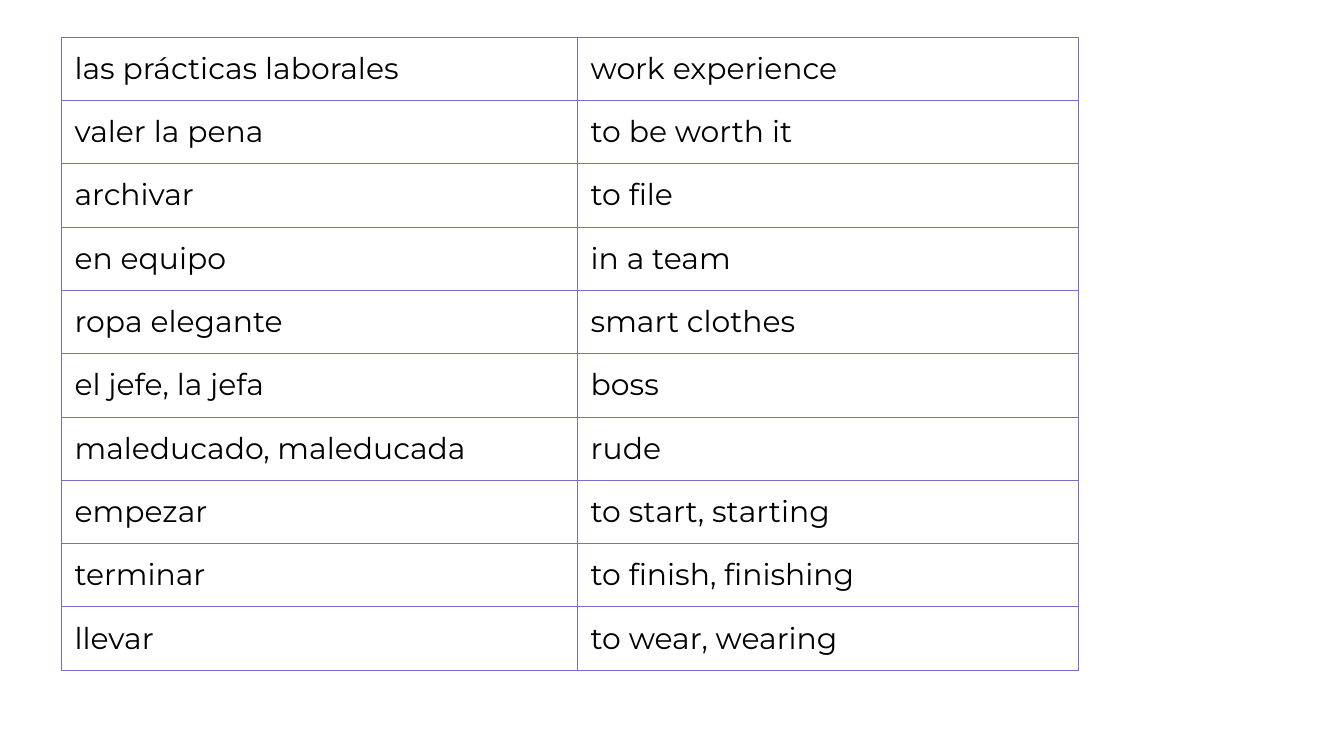
from lxml.etree import SubElement
from pptx import Presentation
from pptx.dml.color import RGBColor
from pptx.oxml.ns import qn
from pptx.util import Inches, Pt

BLACK = RGBColor(0x00, 0x00, 0x00)
PURPLE = RGBColor(0x78, 0x6E, 0xC8)

VOCABULARY = [
    ("las prácticas laborales", "work experience"),
    ("valer la pena", "to be worth it"),
    ("archivar", "to file"),
    ("en equipo", "in a team"),
    ("ropa elegante", "smart clothes"),
    ("el jefe, la jefa", "boss"),
    ("maleducado, maleducada", "rude"),
    ("empezar", "to start, starting"),
    ("terminar", "to finish, finishing"),
    ("llevar", "to wear, wearing"),
]


class VocabularySlide:
    """Holds the text and cell style and the current page."""

    font_format = {"name": "Montserrat", "size": Pt(32), "bold": False}
    cell_format = {f"margin_{side}": Inches(0.2)
                   for side in ("left", "right", "top", "bottom")}
    border_width = Pt(0.75)

    def __init__(self, deck):
        self.page = deck.slides.add_slide(deck.slide_layouts[6])

    def border(self, cell):
        properties = cell._tc.get_or_add_tcPr()
        for side in ("lnL", "lnR", "lnT", "lnB"):
            line = SubElement(properties, qn(f"a:{side}"), w=str(self.border_width))
            fill = SubElement(line, qn("a:solidFill"))
            SubElement(fill, qn("a:srgbClr"), val=str(PURPLE))

    def cell(self, cell, text):
        for name, value in self.cell_format.items():
            setattr(cell, name, value)
        self.border(cell)
        cell.fill.background()
        span = cell.text_frame.paragraphs[0].add_run()
        span.text = text
        for name, value in self.font_format.items():
            setattr(span.font, name, value)
        span.font.color.rgb = BLACK

    def table(self, left, top, widths, row_height, rows):
        table = self.page.shapes.add_table(
            len(rows), len(widths), Inches(left), Inches(top),
            Inches(sum(widths)), Inches(row_height * len(rows))).table
        table.first_row = table.horz_banding = False
        for column, width in zip(table.columns, widths):
            column.width = Inches(width)
        for row, texts in zip(table.rows, rows):
            row.height = Inches(row_height)
            for cell, text in zip(row.cells, texts):
                self.cell(cell, text)


def main():
    deck = Presentation()
    deck.slide_width, deck.slide_height = Inches(20), Inches(11.25)

    # Spanish words with their English meanings
    slide = VocabularySlide(deck)
    slide.table(0.91, 0.55, (7.68, 7.46), 0.83, VOCABULARY)

    deck.save("out.pptx")


if __name__ == "__main__":
    main()
